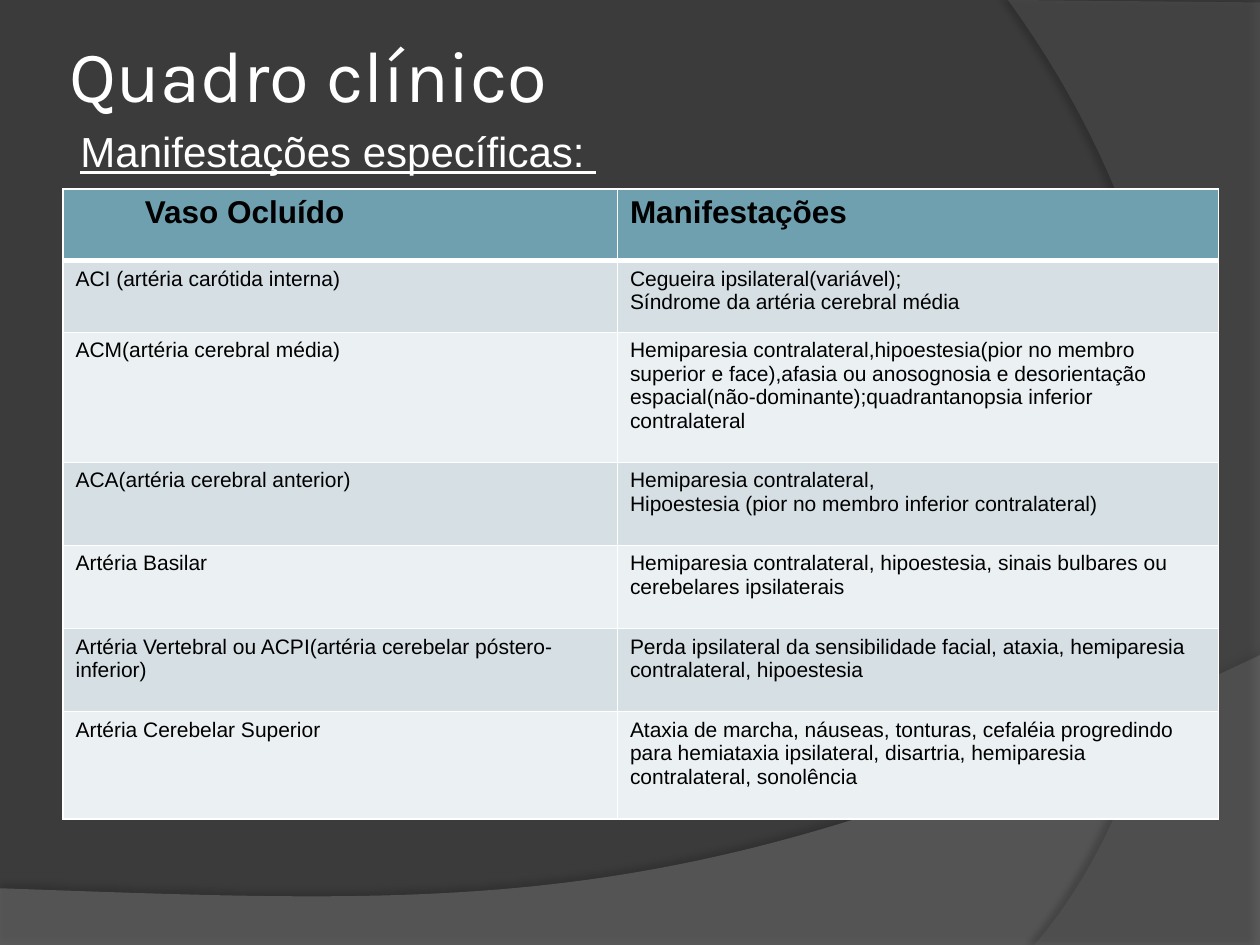
from typing import NamedTuple

from lxml.etree import SubElement
from pptx import Presentation
from pptx.dml.color import RGBColor as Rgb
from pptx.enum.text import MSO_ANCHOR as Anchor, MSO_AUTO_SIZE as AutoSize, PP_ALIGN as Align
from pptx.oxml.ns import qn
from pptx.util import Inches, Pt

COLORS = {
    "background": "3B3B3B",
    "lower_wave": "7F7F7F",
    "right_wave": "5E5E5E",
    "light": "FFFFFF",
    "dark": "000000",
    "header": "6EA0B0",
    "odd_row": "D5DFE4",
    "even_row": "EBF0F2",
}
CURVE_STEPS = 60
Point = tuple[float, float]


class Wave(NamedTuple):
    corners: list[Point]
    curve: list[Point]
    color: str
    opacity: int
    shadow_opacity: int
    shadow_distance: float
    shadow_angle: int


class Finding(NamedTuple):
    vessel: str
    signs: str
    height: float


WAVES = [
    Wave([(0, 7.05), (0, 7.5), (10, 7.5)],
         [(10, 5.2), (5.59, 7.29), (3.91, 7.19), (0, 7.05)],
         "lower_wave", 45, 35, 3.5, 270),
    Wave([(10, 0.02), (10, 7.5)],
         [(8.21, 7.5), (9.35, 6.19), (10.18, 3), (8, 0)],
         "right_wave", 40, 45, 4, 180),
]

FINDINGS = [
    Finding("Vaso Ocluído", "Manifestações", 0.57),
    Finding("ACI (artéria carótida interna)",
            "Cegueira ipsilateral(variável);\nSíndrome da artéria cerebral média", 0.57),
    Finding("ACM(artéria cerebral média)",
            "Hemiparesia contralateral,hipoestesia(pior no membro superior e face),"
            "afasia ou anosognosia e desorientação espacial(não-dominante);"
            "quadrantanopsia inferior contralateral", 1.03),
    Finding("ACA(artéria cerebral anterior)",
            "Hemiparesia contralateral,\n"
            "Hipoestesia (pior no membro inferior contralateral)", 0.66),
    Finding("Artéria Basilar",
            "Hemiparesia contralateral, hipoestesia, sinais bulbares ou "
            "cerebelares ipsilaterais", 0.66),
    Finding("Artéria Vertebral ou ACPI(artéria cerebelar póstero-inferior)",
            "Perda ipsilateral da sensibilidade facial, ataxia, hemiparesia "
            "contralateral, hipoestesia", 0.66),
    Finding("Artéria Cerebelar Superior",
            "Ataxia de marcha, náuseas, tonturas, cefaléia progredindo para "
            "hemiataxia ipsilateral, disartria, hemiparesia contralateral, sonolência", 0.85),
]


def rgb(name: str) -> Rgb:
    return Rgb.from_string(COLORS[name])


def place(shape, left: float, top: float, width: float, height: float) -> None:
    shape.left, shape.top = Inches(left), Inches(top)
    shape.width, shape.height = Inches(width), Inches(height)


def format_text(frame, font: str, size: float, color: str,
                bold: bool = False, underline: bool = False) -> None:
    for paragraph in frame.paragraphs:
        paragraph.alignment = Align.LEFT
        for run in paragraph.runs:
            run.font.name, run.font.size = font, Pt(size)
            run.font.bold, run.font.underline = bold, underline
            run.font.color.rgb = rgb(color)


def bezier(curve: list[Point], t: float) -> Point:
    weights = ((1 - t) ** 3, 3 * t * (1 - t) ** 2, 3 * t ** 2 * (1 - t), t ** 3)
    return (sum(w * x for w, (x, _) in zip(weights, curve)),
            sum(w * y for w, (_, y) in zip(weights, curve)))


def draw_wave(slide, wave: Wave) -> None:
    outline = wave.corners + [bezier(wave.curve, i / CURVE_STEPS) for i in range(CURVE_STEPS + 1)]
    points = [(Inches(x), Inches(y)) for x, y in outline]
    builder = slide.shapes.build_freeform(*points[0])
    builder.add_line_segments(points[1:], close=True)
    shape = builder.convert_to_shape()
    shape.shadow.inherit = False
    shape.line.fill.background()
    shape.fill.solid()
    shape.fill.fore_color.rgb = rgb(wave.color)
    properties = shape.fill._xPr
    fill_color = properties.find(qn("a:solidFill"))[0]
    SubElement(fill_color, qn("a:alpha"), val=str(wave.opacity * 1000))
    shadow = SubElement(properties.find(qn("a:effectLst")), qn("a:outerShdw"),
                        blurRad=str(Pt(4)), dist=str(Pt(wave.shadow_distance)),
                        dir=str(wave.shadow_angle * 60000), rotWithShape="0")
    shadow_color = SubElement(shadow, qn("a:srgbClr"), val=COLORS["dark"])
    SubElement(shadow_color, qn("a:alpha"), val=str(wave.shadow_opacity * 1000))


def draw_borders(cell, top: float, bottom: float) -> None:
    properties = cell._tc.get_or_add_tcPr()
    for side, width in (("L", 1), ("R", 1), ("T", top), ("B", bottom)):
        line = SubElement(properties, qn(f"a:ln{side}"), w=str(Pt(width)))
        SubElement(SubElement(line, qn("a:solidFill")), qn("a:srgbClr"), val=COLORS["light"])


def draw_findings(slide) -> None:
    height = sum(finding.height for finding in FINDINGS)
    table = slide.shapes.add_table(len(FINDINGS), 2, Inches(0.5), Inches(1.5),
                                   Inches(9.17), Inches(height)).table
    table.columns[0].width, table.columns[1].width = Inches(4.4), Inches(4.77)
    for index, finding in enumerate(FINDINGS):
        header = index == 0
        fill = "header" if header else "odd_row" if index % 2 else "even_row"
        table.rows[index].height = Inches(finding.height)
        for column, text in enumerate((finding.vessel, finding.signs)):
            cell = table.cell(index, column)
            cell.text_frame.text = text
            format_text(cell.text_frame, "Arial", 18 if header else 12, "dark", bold=header)
            draw_borders(cell, 3 if index == 1 else 1, 3 if header else 1)
            cell.fill.solid()
            cell.fill.fore_color.rgb = rgb(fill)
    vessel_heading = table.cell(0, 0).text_frame.paragraphs[0]
    vessel_heading._p.get_or_add_pPr().set("marL", str(Inches(0.55)))


def draw_headings(slide) -> None:
    title = slide.shapes.title
    place(title, 0.5, 0.17, 8.17, 0.83)
    frame = title.text_frame
    frame.text = "Quadro clínico"
    frame.auto_size = AutoSize.NONE
    frame.vertical_anchor = Anchor.MIDDLE
    frame.margin_left = frame.margin_right = Inches(0.05)
    format_text(frame, "Karla", 41.4, "light")

    subtitle = slide.shapes.add_textbox(Inches(0.54), Inches(0.95), Inches(9), Inches(0.5))
    subtitle.text_frame.text = "Manifestações específicas: "
    subtitle.text_frame.word_wrap = True
    format_text(subtitle.text_frame, "Arial", 24, "light", underline=True)


def main() -> None:
    deck = Presentation()
    deck.slide_width, deck.slide_height = Inches(10), Inches(7.5)
    slide = deck.slides.add_slide(deck.slide_layouts[5])
    slide.background.fill.solid()
    slide.background.fill.fore_color.rgb = rgb("background")
    for wave in WAVES:
        draw_wave(slide, wave)
    draw_headings(slide)
    draw_findings(slide)
    deck.save("out.pptx")


if __name__ == "__main__":
    main()
